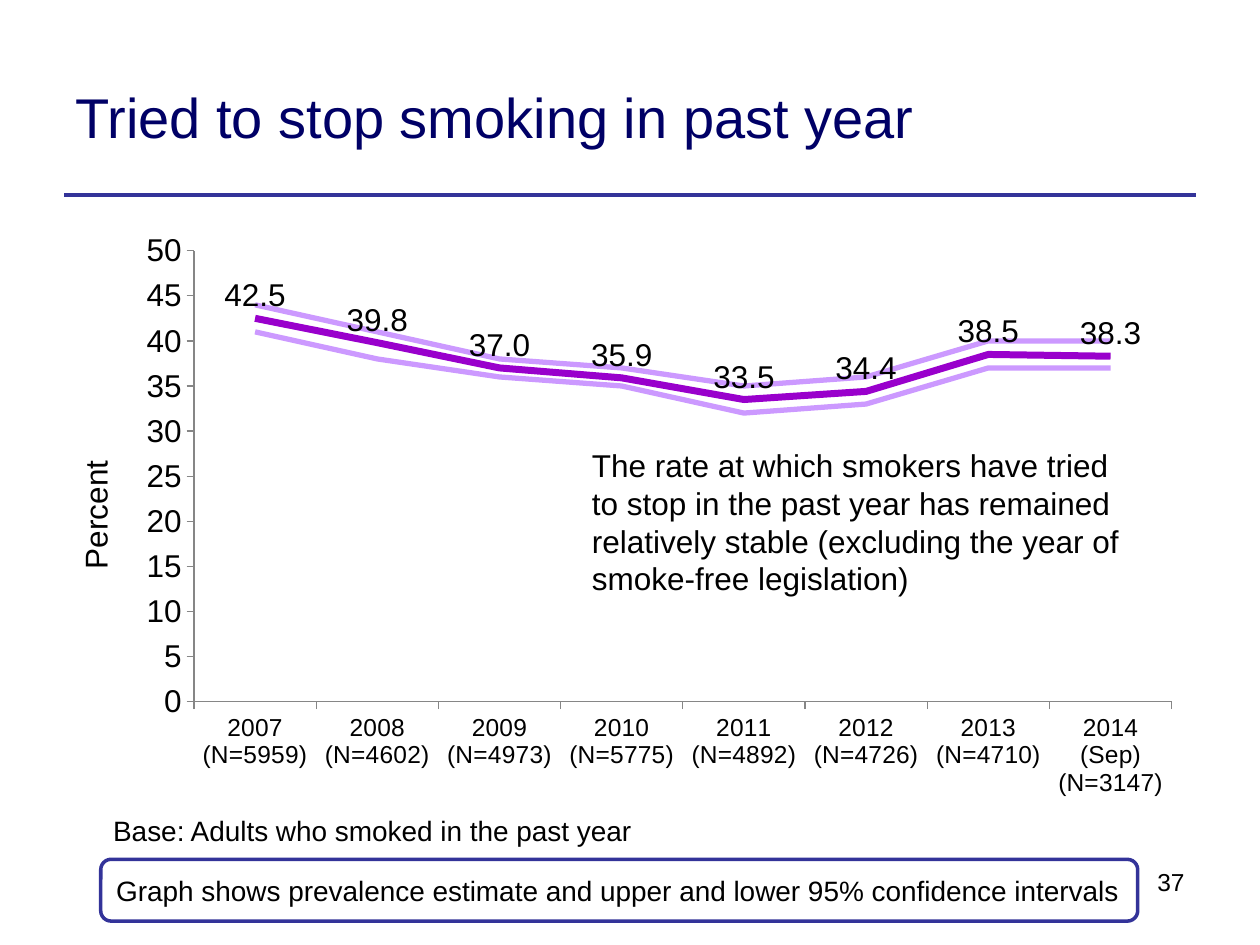
from lxml import etree
from pptx import Presentation
from pptx.chart.data import CategoryChartData
from pptx.dml.color import RGBColor
from pptx.enum.chart import XL_CHART_TYPE, XL_LABEL_POSITION, XL_MARKER_STYLE, XL_TICK_MARK
from pptx.enum.shapes import MSO_CONNECTOR, MSO_SHAPE
from pptx.enum.text import MSO_ANCHOR, MSO_AUTO_SIZE, PP_ALIGN
from pptx.oxml.ns import qn
from pptx.util import Inches, Pt

LINE = XL_CHART_TYPE.LINE
ABOVE = XL_LABEL_POSITION.ABOVE
NO_MARKER = XL_MARKER_STYLE.NONE
OUTSIDE, NO_TICK = XL_TICK_MARK.OUTSIDE, XL_TICK_MARK.NONE
STRAIGHT = MSO_CONNECTOR.STRAIGHT
ROUNDED = MSO_SHAPE.ROUNDED_RECTANGLE
TOP, MIDDLE = MSO_ANCHOR.TOP, MSO_ANCHOR.MIDDLE
GROW = MSO_AUTO_SIZE.SHAPE_TO_FIT_TEXT
LEFT, RIGHT = PP_ALIGN.LEFT, PP_ALIGN.RIGHT

FONT = "Arial"
BLACK, WHITE, NAVY, RULE, GREY = "000000", "FFFFFF", "000066", "333399", "868686"
PURPLE, LILAC = "9900CC", "CC99FF"

CHART_W, CHART_H = 9.11, 4.66
CATEGORIES = ["2007 (N=5959)", "2008 (N=4602)", "2009 (N=4973)", "2010 (N=5775)",
              "2011 (N=4892)", "2012 (N=4726)", "2013 (N=4710)", "2014 (Sep) (N=3147)"]
SERIES = [
    ("Series 1", [42.5, 39.8, 37, 35.9, 33.5, 34.4, 38.5, 38.3], PURPLE, 4),
    ("Series 2", [44, 41, 38, 37, 35, 36, 40, 40], LILAC, 3),
    ("Series 3", [41, 38, 36, 35, 32, 33, 37, 37], LILAC, 3),
]


def rgb(value):
    return RGBColor.from_string(value)


def box(*lengths):
    return [Inches(n) for n in lengths]


def style_line(line, color, width):
    line.color.rgb = rgb(color)
    line.width = Pt(width)


def style_font(font, size, color=BLACK):
    font.name = FONT
    font.size = Pt(size)
    font.color.rgb = rgb(color)


def write(sp, text, size, color=BLACK, align=LEFT, anchor=TOP, wrap=True):
    tf = sp.text_frame
    tf.text = text
    tf.word_wrap = wrap
    tf.vertical_anchor = anchor
    p = tf.paragraphs[0]
    p.alignment = align
    style_font(p.runs[0].font, size, color)


def add_text(s, place, text, size, grow=False, **style):
    sp = s.shapes.add_textbox(*box(*place))
    write(sp, text, size, **style)
    if grow:
        sp.text_frame.auto_size = GROW


def add_rule(s, left, right, y):
    sp = s.shapes.add_connector(STRAIGHT, *box(left, y, right, y))
    style_line(sp.line, RULE, 2.25)
    etree.SubElement(sp._element.spPr, qn("a:effectLst"))


def add_note(s, place, text):
    sp = s.shapes.add_shape(ROUNDED, *box(*place))
    sp.shadow.inherit = False
    sp.fill.solid()
    sp.fill.fore_color.rgb = rgb(WHITE)
    style_line(sp.line, RULE, 2)
    write(sp, text, 16, anchor=MIDDLE)


def set_layout(parent, index, **values):
    for old in parent.findall(qn("c:layout")):
        parent.remove(old)
    layout = etree.Element(qn("c:layout"))
    manual = etree.SubElement(layout, qn("c:manualLayout"))
    for tag, value in values.items():
        etree.SubElement(manual, qn("c:" + tag)).set("val", str(value))
    parent.insert(index, layout)


def style_axis(axis, size):
    axis.has_major_gridlines = False
    axis.major_tick_mark = OUTSIDE
    axis.minor_tick_mark = NO_TICK
    style_line(axis.format.line, GREY, 0.75)
    style_font(axis.tick_labels.font, size)


def add_axis_title(axis, text):
    tf = axis.axis_title.text_frame
    tf.text = text
    r = tf.paragraphs[0].runs[0]
    style_font(r.font, 18)
    r.font.bold = False
    body = tf._txBody.find(qn("a:bodyPr"))
    body.set("rot", "-5400000")
    body.set("vert", "horz")
    set_layout(axis.axis_title._element, 1, xMode="edge", yMode="edge",
               x=0.18 / CHART_W, y=1.86 / CHART_H)


def add_labels(series):
    labels = series.data_labels
    labels.show_value = True
    labels.position = ABOVE
    labels.number_format = "#,##0.0"
    labels.number_format_is_linked = False
    style_font(labels.font, 18)


def add_trend_chart(s, left, top):
    data = CategoryChartData()
    data.categories = CATEGORIES
    for name, values, _, _ in SERIES:
        data.add_series(name, values)
    chart = s.shapes.add_chart(LINE, *box(left, top, CHART_W, CHART_H), data).chart
    chart.has_legend = False
    chart.has_title = False
    style_font(chart.font, 18)
    plot = chart.plots[0]
    plot.vary_by_categories = False
    for series, (_, _, color, width) in zip(plot.series, SERIES):
        series.smooth = False
        series.marker.style = NO_MARKER
        style_line(series.format.line, color, width)
    add_labels(plot.series[0])
    style_axis(chart.category_axis, 14)
    axis = chart.value_axis
    style_axis(axis, 18)
    axis.minimum_scale, axis.maximum_scale, axis.major_unit = 0, 50, 5
    axis.tick_labels.number_format = "General"
    axis.tick_labels.number_format_is_linked = False
    add_axis_title(axis, "Percent")
    area = chart._chartSpace.chart.plotArea
    set_layout(area, 0, layoutTarget="inner", xMode="edge", yMode="edge",
               x=1.17 / CHART_W, y=0.24 / CHART_H, w=7.76 / CHART_W, h=3.58 / CHART_H)


def main():
    prs = Presentation()
    prs.slide_width, prs.slide_height = box(10, 7.5)
    s = prs.slides.add_slide(prs.slide_layouts[6])
    add_rule(s, 0.51, 9.49, 1.55)
    add_text(s, (0.5, 0.3, 7.89, 1.25), "Tried to stop smoking in past year", 32,
             color=NAVY, anchor=MIDDLE)
    add_trend_chart(s, 0.37, 1.75)
    add_text(s, (6.73, 6.83, 2.77, 0.52), "37", 14, align=RIGHT)
    add_note(s, (0.8, 6.82, 8.23, 0.49),
             "Graph shows prevalence estimate and upper and lower 95% confidence intervals")
    add_text(s, (0.8, 6.41, 4.37, 0.37), "Base: Adults who smoked in the past year", 16,
             grow=True, wrap=False)
    add_text(s, (4.6, 3.49, 4.53, 1.31),
             "The rate at which smokers have tried to stop in the past year has remained "
             "relatively stable (excluding the year of smoke-free legislation)", 18, grow=True)
    prs.save("out.pptx")


if __name__ == "__main__":
    main()
